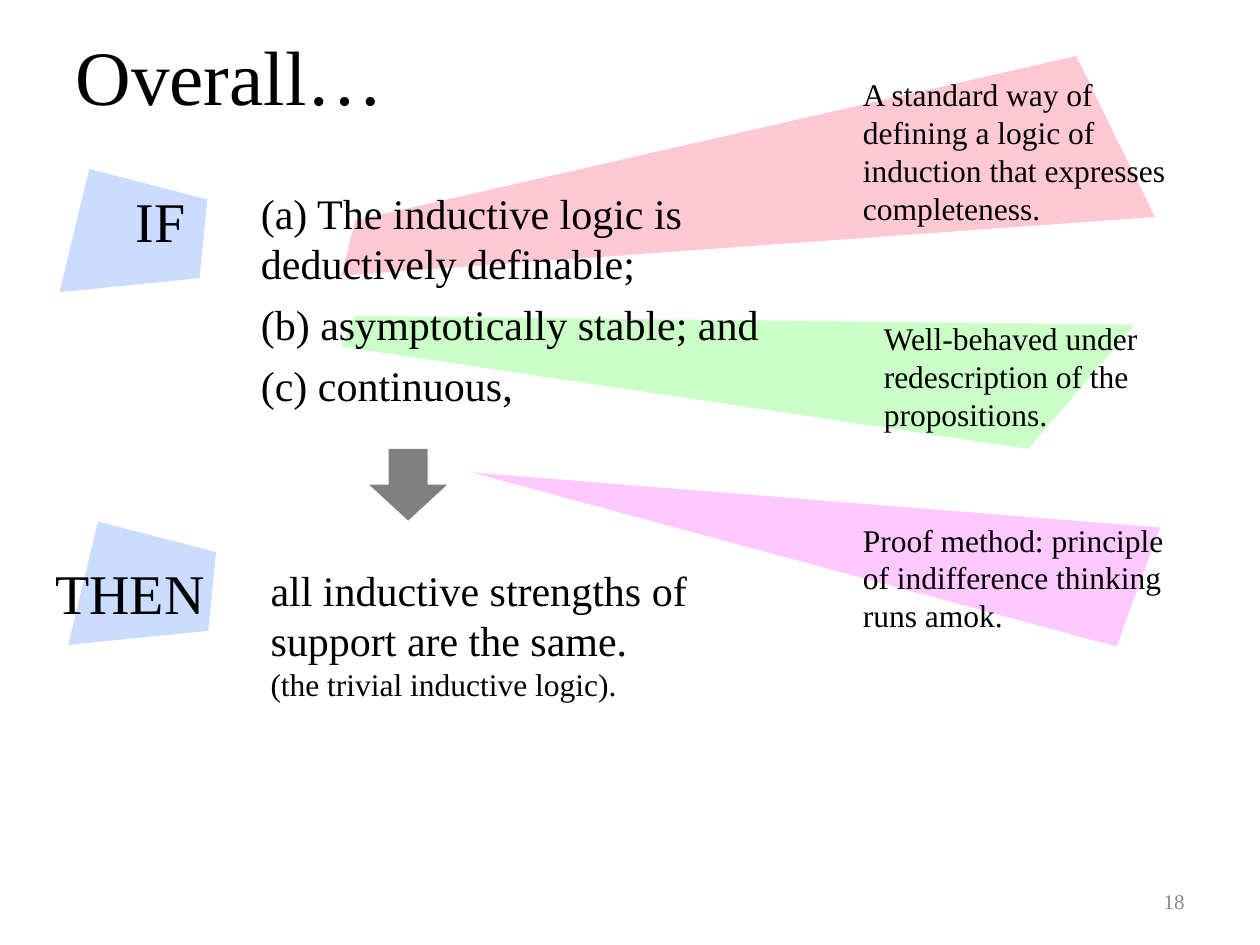
from pptx import Presentation
from pptx.dml.color import RGBColor
from pptx.enum.shapes import MSO_SHAPE as Shape
from pptx.enum.text import MSO_ANCHOR as Anchor, MSO_AUTO_SIZE as AutoSize, PP_ALIGN as Align
from pptx.util import Pt

BLACK = RGBColor(0x00, 0x00, 0x00)
GRAY = RGBColor(0x80, 0x80, 0x80)
NUMBER_GRAY = RGBColor(0x89, 0x89, 0x89)
BLUE = RGBColor(0xCA, 0xDC, 0xFF)
PINK = RGBColor(0xFF, 0xC8, 0xD3)
GREEN = RGBColor(0xCA, 0xFF, 0xC8)
MAGENTA = RGBColor(0xFF, 0xC8, 0xFF)


class SlideWriter:
    """Holds the typeface and the current slide; lengths are in points."""

    def __init__(self, slide, typeface="Times New Roman"):
        self.slide = slide
        self.shapes = slide.shapes
        self.typeface = typeface

    def style(self, paragraph, size, color=BLACK):
        paragraph.font.name = self.typeface
        paragraph.font.size = Pt(size)
        paragraph.font.color.rgb = color

    def paint(self, shape, color):
        shape.shadow.inherit = False
        shape.fill.solid()
        shape.fill.fore_color.rgb = color
        shape.line.fill.background()

    def title(self, wording, box, size=44):
        heading = self.shapes.title
        heading.left, heading.top, heading.width, heading.height = map(Pt, box)
        frame = heading.text_frame
        frame.text = wording
        frame.auto_size = AutoSize.NONE
        frame.vertical_anchor = Anchor.MIDDLE
        frame.paragraphs[0].alignment = Align.LEFT
        self.style(frame.paragraphs[0], size)

    def text(self, lines, box, wrap=True, gap=0, color=BLACK, align=Align.LEFT,
             anchor=Anchor.TOP, parent=None):
        """Add a text box; lines are (wording, size) pairs, one per paragraph."""
        frame = (parent or self.shapes).add_textbox(*map(Pt, box)).text_frame
        frame.word_wrap = wrap
        frame.auto_size = AutoSize.SHAPE_TO_FIT_TEXT
        frame.vertical_anchor = anchor
        for index, (wording, size) in enumerate(lines):
            paragraph = frame.add_paragraph() if index else frame.paragraphs[0]
            paragraph.text = wording
            paragraph.alignment = align
            paragraph.space_after = Pt(gap)
            self.style(paragraph, size, color)

    def polygon(self, corners, color, parent=None):
        start, *others = [(Pt(x), Pt(y)) for x, y in corners]
        builder = (parent or self.shapes).build_freeform(*start)
        builder.add_line_segments(others, close=True)
        self.paint(builder.convert_to_shape(), color)

    def callout(self, corners, color, wording, box):
        """Group a coloured beam with the remark at its wide end."""
        members = self.shapes.add_group_shape().shapes
        self.polygon(corners, color, members)
        self.text([(wording, 18)], box, parent=members)

    def down_arrow(self, box, color):
        self.paint(self.shapes.add_shape(Shape.DOWN_ARROW, *map(Pt, box)), color)


def main():
    deck = Presentation()
    deck.slide_width, deck.slide_height = Pt(720), Pt(540)
    writer = SlideWriter(deck.slides.add_slide(deck.slide_layouts[5]))

    writer.title("Overall…", (36, 21.5, 631, 42))

    writer.callout([(615, 32), (203, 126), (195, 157.5), (660, 124)], PINK,
                   "A standard way of defining a logic of induction that expresses completeness.",
                   (486, 39.5, 199.5, 94.5))
    writer.callout([(648.5, 185.5), (203, 180.5), (195, 198), (587.5, 256.5)], GREEN,
                   "Well-behaved under redescription of the propositions.",
                   (498, 179, 204.5, 72.5))

    marker = [(51, 96.5), (118.5, 114), (114, 159), (34, 167)]
    for dx, dy in ((0, 0), (5, 201.5)):
        writer.polygon([(x + dx, y + dy) for x, y in marker], BLUE)

    writer.text([("IF", 32)], (70.5, 103, 44, 46), wrap=False)
    conditions = ("(a) The inductive logic is deductively definable;",
                  "(b) asymptotically stable; and",
                  "(c) continuous,")
    writer.text([(condition, 24) for condition in conditions],
                (142, 103.5, 314, 136), gap=6)

    writer.text([("THEN", 32)], (24.5, 315.5, 101, 46), wrap=False)
    writer.text([("all inductive strengths of support are the same.", 24),
                 ("(the trivial inductive logic).", 18)],
                (147.5, 319, 314, 90))

    writer.down_arrow((211, 256.5, 44.5, 41), GRAY)
    writer.callout([(269.5, 270), (663, 301.5), (638, 369.5)], MAGENTA,
                   "Proof method: principle of indifference thinking runs amok.",
                   (486, 294, 202.5, 72.5))

    writer.text([("18", 12)], (516, 500.5, 168, 29), color=NUMBER_GRAY,
                align=Align.RIGHT, anchor=Anchor.MIDDLE)

    deck.save("out.pptx")


if __name__ == "__main__":
    main()
